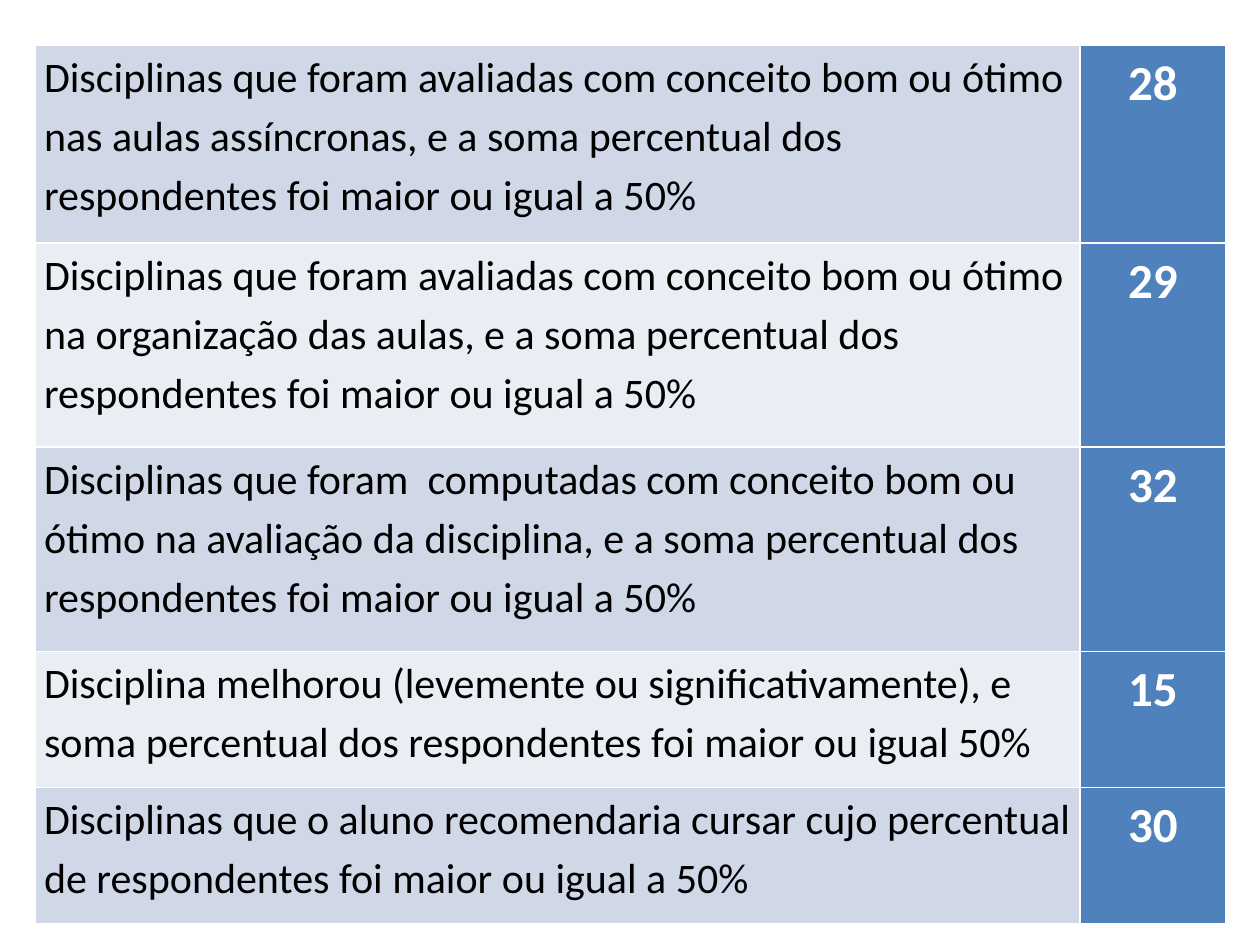
from typing import NamedTuple

from lxml import etree
from pptx import Presentation
from pptx import util as u
from pptx.dml import color
from pptx.enum import text
from pptx.oxml import ns

COLORS = {
    "band_dark": "D0D8E8",
    "band_light": "E9EDF4",
    "count_fill": "4F81BD",
    "criterion_text": "000000",
    "white": "FFFFFF",
}


class Result(NamedTuple):
    criterion: str
    count: int
    height: float


class CellStyle(NamedTuple):
    fill: str
    ink: str
    size: int
    bold: bool
    align: text.PP_ALIGN


RESULTS = [
    Result("Disciplinas que foram avaliadas com conceito bom ou ótimo nas aulas "
           "assíncronas, e a soma percentual dos respondentes foi maior ou igual a 50%",
           28, 1.57),
    Result("Disciplinas que foram avaliadas com conceito bom ou ótimo na organização "
           "das aulas, e a soma percentual dos respondentes foi maior ou igual a 50%",
           29, 1.62),
    Result("Disciplinas que foram  computadas com conceito bom ou ótimo na avaliação "
           "da disciplina, e a soma percentual dos respondentes foi maior ou igual a 50%",
           32, 1.62),
    Result("Disciplina melhorou (levemente ou significativamente), e soma percentual "
           "dos respondentes foi maior ou igual 50%",
           15, 1.08),
    Result("Disciplinas que o aluno recomendaria cursar cujo percentual de "
           "respondentes foi maior ou igual a 50%",
           30, 1.08),
]
COLUMN_WIDTHS = [8.29, 1.16]


def rgb(name: str) -> color.RGBColor:
    return color.RGBColor.from_string(COLORS[name])


def add_borders(cell, color_name: str, width: u.Length) -> None:
    properties = cell._tc.get_or_add_tcPr()
    for side in ("lnL", "lnR", "lnT", "lnB"):
        line = etree.SubElement(properties, ns.qn(f"a:{side}"), w=str(int(width)))
        solid = etree.SubElement(line, ns.qn("a:solidFill"))
        etree.SubElement(solid, ns.qn("a:srgbClr"), val=COLORS[color_name])


def fill_cell(cell, content: str, style: CellStyle) -> None:
    add_borders(cell, "white", u.Pt(1))
    cell.fill.solid()
    cell.fill.fore_color.rgb = rgb(style.fill)
    cell.margin_left = cell.margin_right = u.Inches(0.07)
    cell.margin_top = cell.margin_bottom = 0
    cell.text = content
    paragraph = cell.text_frame.paragraphs[0]
    paragraph.alignment = style.align
    paragraph.line_spacing = 1.15
    paragraph.font.name = "Calibri"
    paragraph.font.size = u.Pt(style.size)
    paragraph.font.bold = style.bold
    paragraph.font.color.rgb = rgb(style.ink)


def add_results(slide, results: list[Result]) -> None:
    table = slide.shapes.add_table(
        len(results), len(COLUMN_WIDTHS), u.Inches(0.28), u.Inches(0.36),
        u.Inches(sum(COLUMN_WIDTHS)), u.Inches(sum(r.height for r in results)),
    ).table
    table.first_row = False
    for column, width in zip(table.columns, COLUMN_WIDTHS):
        column.width = u.Inches(width)

    count_style = CellStyle("count_fill", "white", 28, True, text.PP_ALIGN.CENTER)
    for index, result in enumerate(results):
        band = "band_light" if index % 2 else "band_dark"
        criterion_style = CellStyle(band, "criterion_text", 24, False, text.PP_ALIGN.LEFT)
        table.rows[index].height = u.Inches(result.height)
        fill_cell(table.cell(index, 0), result.criterion, criterion_style)
        fill_cell(table.cell(index, 1), str(result.count), count_style)


def main() -> None:
    presentation = Presentation()
    presentation.slide_width = u.Inches(10)
    presentation.slide_height = u.Inches(7.5)
    slide = presentation.slides.add_slide(presentation.slide_layouts[6])
    add_results(slide, RESULTS)
    presentation.save("out.pptx")


if __name__ == "__main__":
    main()
